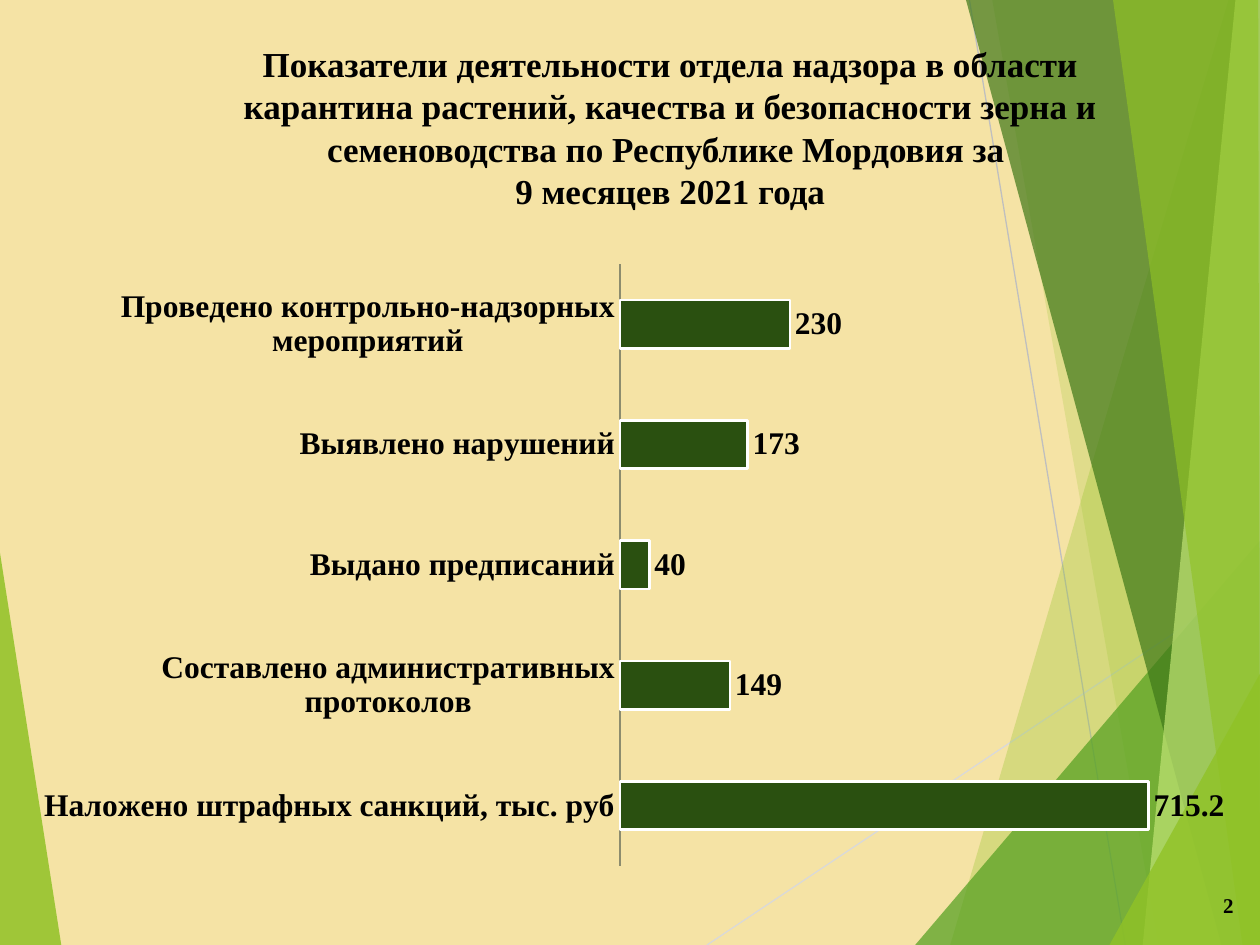
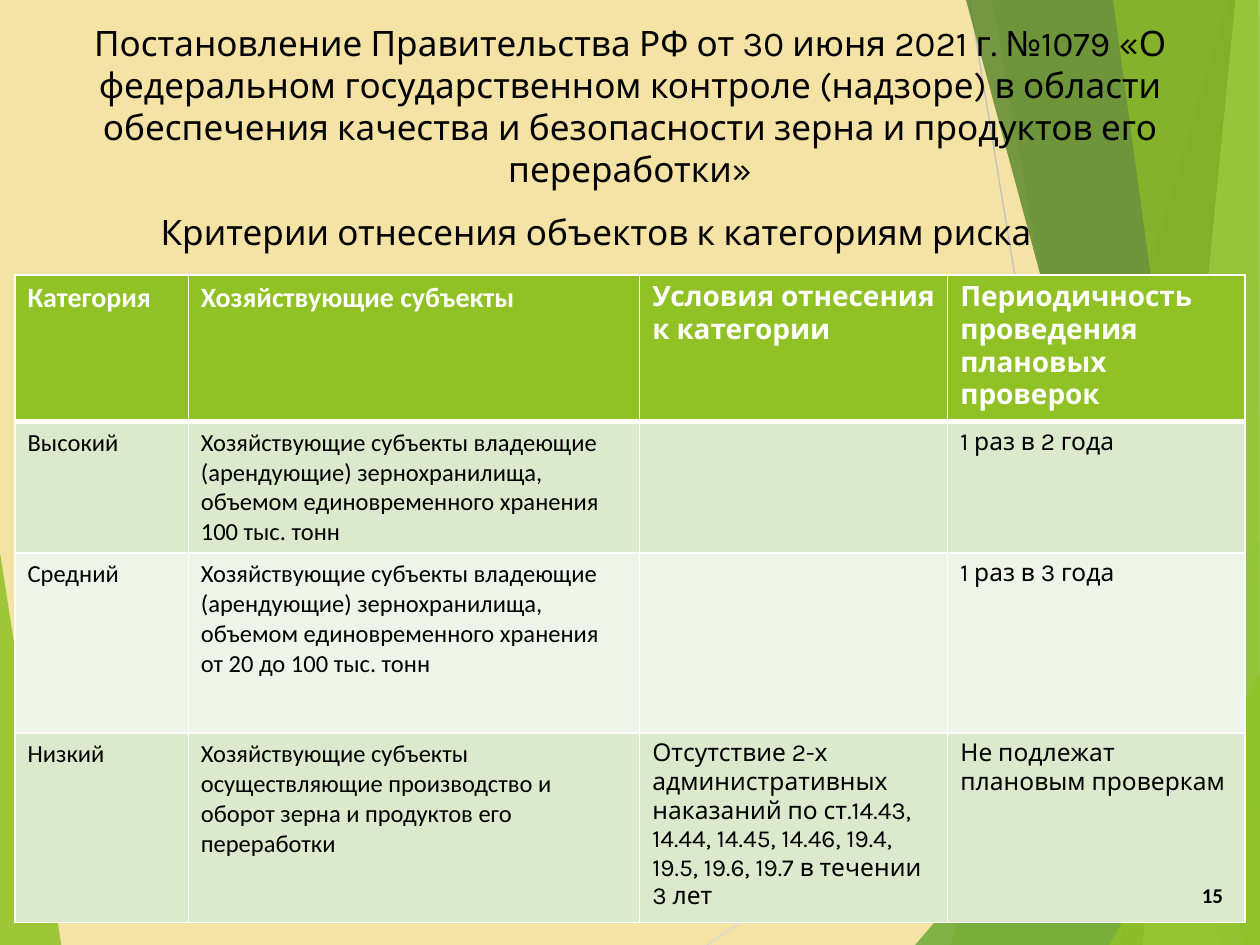
"""Build two slides on plant quarantine and grain safety supervision: a bar chart and a risk category table."""
from lxml import etree
from pptx import Presentation
from pptx.chart import data as chartdata
from pptx.dml.color import RGBColor
from pptx.enum import chart as charts, shapes, text
from pptx.oxml import ns, parse_xml
from pptx.util import Pt

SAND, BLACK, WHITE = "F5E3A5", "000000", "FFFFFF"
LIME, GREEN, FOREST, PALE = "90C226", "54A021", "3F7819", "C0E474"
BAR, AXIS, ROW_DARK, ROW_LIGHT = "2A5010", "8C8C6E", "DBE9CD", "EEF4E8"
SERIF, SANS, DISPLAY = "Times New Roman", "Calibri", "Karla"
WIDTH, HEIGHT = 720, 540


def rgb(value):
    return RGBColor.from_string(value)


def add_text(slide, wording, box, font, size, align, bold=False, spacing=None):
    frame = slide.shapes.add_textbox(*map(Pt, box)).text_frame
    frame.word_wrap = True
    frame.text = wording
    paragraph = frame.paragraphs[0]
    paragraph.alignment = align
    paragraph.line_spacing = spacing
    paragraph.font.name, paragraph.font.size = font, Pt(size)
    paragraph.font.bold, paragraph.font.color.rgb = bold, rgb(BLACK)
    return frame


prs = Presentation()
prs.slide_width, prs.slide_height = Pt(WIDTH), Pt(HEIGHT)
results, criteria = [prs.slides.add_slide(prs.slide_layouts[6]) for _ in range(2)]

rays = [
    ((404, HEIGHT), (WIDTH, 329), "D9D9D9"),
    ((554, 0), (643, HEIGHT), "BFBFBF"),
]
corner, top_corner = (WIDTH, HEIGHT), (WIDTH, 0)
facets = [
    ([(0, 316), (35, HEIGHT), (0, HEIGHT)], LIME, 85),
    ([(702, 0), (543, HEIGHT), corner, top_corner], LIME, 30),
    ([(567, 0), (662, HEIGHT), corner, top_corner], LIME, 20),
    ([(523, HEIGHT), (WIDTH, 309), corner], GREEN, 72),
    ([(552, 0), (698, HEIGHT), corner, top_corner], FOREST, 70),
    ([(706, 0), (653, HEIGHT), corner, top_corner], PALE, 70),
    ([(636, 0), (710, HEIGHT), corner, (719, 0)], LIME, 65),
    ([(634, HEIGHT), (WIDTH, 385), corner], LIME, 80),
]
for slide in (results, criteria):
    slide.background.fill.solid()
    slide.background.fill.fore_color.rgb = rgb(SAND)
    for start, end, color in rays:
        ray = slide.shapes.add_connector(shapes.MSO_CONNECTOR.STRAIGHT, *map(Pt, start + end))
        ray.line.color.rgb, ray.line.width = rgb(color), Pt(0.75)
        etree.SubElement(ray.element.spPr, ns.qn("a:effectLst"))
    for outline, color, opacity in facets:
        builder = slide.shapes.build_freeform(*outline[0], scale=Pt(1))
        builder.add_line_segments(outline[1:])
        facet = builder.convert_to_shape()
        facet.shadow.inherit = False
        facet.line.fill.background()
        facet.fill.solid()
        facet.fill.fore_color.rgb = rgb(color)
        tint = facet.element.spPr.find(".//" + ns.qn("a:srgbClr"))
        etree.SubElement(tint, ns.qn("a:alpha"), val=str(opacity * 1000))

center, right = text.PP_ALIGN.CENTER, text.PP_ALIGN.RIGHT
add_text(results, "Показатели деятельности отдела надзора в области карантина растений, "
         "качества и безопасности зерна и семеноводства по Республике Мордовия за \v"
         "9 месяцев 2021 года", (93, 21, 580, 106), SERIF, 20, center, True, Pt(24))

indicators = chartdata.CategoryChartData()
indicators.categories = [
    "Наложено штрафных санкций, тыс. руб",
    "Составлено административных протоколов",
    "Выдано предписаний",
    "Выявлено нарушений",
    "Проведено контрольно-надзорных мероприятий",
]
indicators.add_series("Series 1", (715.2, 149, 40, 173, 230))
chart = results.shapes.add_chart(charts.XL_CHART_TYPE.BAR_CLUSTERED,
                                 Pt(8.6), Pt(134), Pt(695.5), Pt(366), indicators).chart
chart.has_legend = chart.has_title = False
chart.font.name, chart.font.size, chart.font.bold = SERIF, Pt(18), True
chart.font.color.rgb = rgb(BLACK)
chart.category_axis.major_tick_mark = charts.XL_TICK_MARK.NONE
chart.category_axis.format.line.color.rgb = rgb(AXIS)
chart.category_axis.format.line.width = Pt(0.75)
chart.value_axis.visible = chart.value_axis.has_major_gridlines = False
chart.value_axis.minimum_scale, chart.value_axis.maximum_scale = 0, 800
plot = chart.plots[0]
plot.gap_width, plot.overlap, plot.vary_by_categories = 150, -25, False
plot.has_data_labels = True
plot.data_labels.show_value = True
plot.data_labels.position = charts.XL_LABEL_POSITION.OUTSIDE_END
bars = plot.series[0].format
bars.fill.solid()
bars.fill.fore_color.rgb = rgb(BAR)
bars.line.color.rgb, bars.line.width = rgb(WHITE), Pt(1.5)

plot_area = chart.element.chart.plotArea
for stale in plot_area.findall(ns.qn("c:layout")):
    plot_area.remove(stale)
layout = etree.Element(ns.qn("c:layout"))
manual = etree.SubElement(layout, ns.qn("c:manualLayout"))
for tag, val in [("layoutTarget", "inner"), ("xMode", "edge"), ("yMode", "edge"),
                 ("x", "0.497"), ("y", "0.046"), ("w", "0.486"), ("h", "0.94")]:
    etree.SubElement(manual, ns.qn("c:" + tag), val=val)
plot_area.insert(0, layout)

add_text(criteria, "Постановление Правительства РФ от 30 июня 2021 г. №1079 «О федеральном "
         "государственном контроле (надзоре) в области обеспечения качества и безопасности "
         "зерна и продуктов его переработки»", (9, 9, 702, 97), DISPLAY, 20, center,
         spacing=Pt(24))
add_text(criteria, "Критерии отнесения объектов к категориям риска",
         (20, 117, 641, 28), DISPLAY, 20, center)

storage = ("Хозяйствующие субъекты владеющие (арендующие) зернохранилища, "
           "объемом единовременного хранения\n")
risk_rows = [
    ("Категория", "Хозяйствующие субъекты", "Условия отнесения к категории",
     "Периодичность проведения плановых проверок"),
    ("Высокий", storage + "100 тыс. тонн", "", "1 раз в 2 года"),
    ("Средний", storage + "от 20 до 100 тыс. тонн", "", "1 раз в 3 года"),
    ("Низкий", "Хозяйствующие субъекты осуществляющие производство и оборот зерна "
     "и продуктов его переработки",
     "Отсутствие 2-х административных наказаний по ст.14.43, 14.44, 14.45, 14.46, "
     "19.4, 19.5, 19.6, 19.7 в течении 3 лет", "Не подлежат плановым проверкам"),
]
column_widths = (99, 258, 176, 170)
row_heights = (82, 75, 103, 105)
row_fills = (LIME, ROW_DARK, ROW_LIGHT, ROW_DARK)
column_fonts = (SANS, SANS, DISPLAY, DISPLAY)
risks = criteria.shapes.add_table(4, 4, Pt(8.6), Pt(157), Pt(sum(column_widths)),
                                  Pt(sum(row_heights))).table
for column, width in zip(risks.columns, column_widths):
    column.width = Pt(width)
for r, wordings in enumerate(risk_rows):
    risks.rows[r].height = Pt(row_heights[r])
    header = r == 0
    for c, wording in enumerate(wordings):
        cell = risks.cell(r, c)
        cell.text = wording
        cell.fill.solid()
        cell.fill.fore_color.rgb = rgb(row_fills[r])
        for paragraph in cell.text_frame.paragraphs:
            paragraph.font.name, paragraph.font.size = column_fonts[c], Pt(16 if header else 14)
            paragraph.font.bold = header
            paragraph.font.color.rgb = rgb(WHITE if header else BLACK)
        for i, side in enumerate("LRTB"):
            thick = (r, side) in ((0, "B"), (1, "T"))
            border = parse_xml(
                f'<a:ln{side} {ns.nsdecls("a")} w="{Pt(3 if thick else 1)}"><a:solidFill>'
                f'<a:srgbClr val="{WHITE}"/></a:solidFill></a:ln{side}>')
            cell._tc.get_or_add_tcPr().insert(i, border)

for slide, number, left, top, font in [(results, "2", 672, 502.5, SERIF),
                                       (criteria, "15", 666, 497, SANS)]:
    page = add_text(slide, number, (left, top, 40, 29), font, 12, right, True)
    page.vertical_anchor = text.MSO_ANCHOR.MIDDLE

prs.save("out.pptx")
